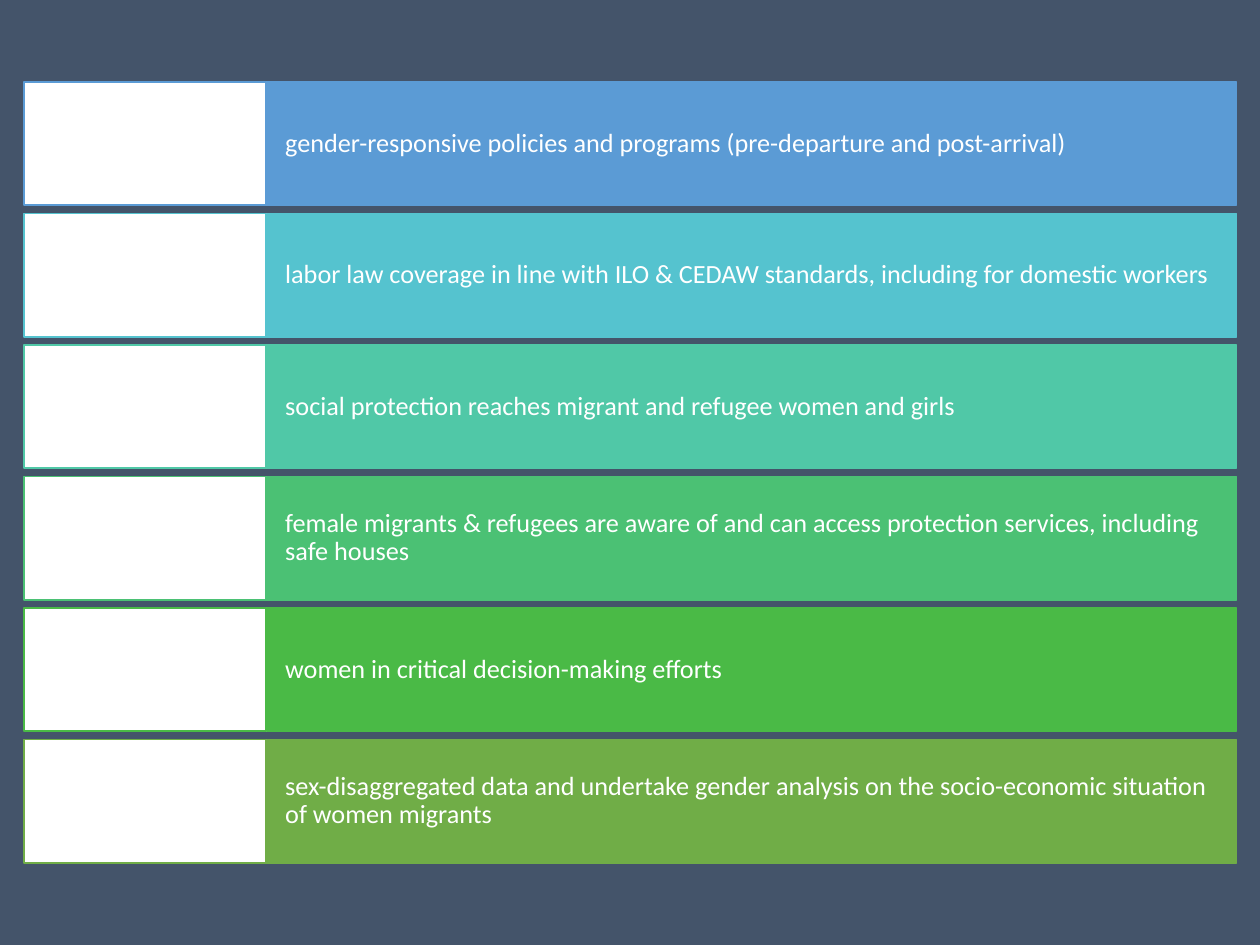
from pptx import Presentation
from pptx.dml.color import RGBColor
from pptx.enum.shapes import MSO_SHAPE as Shape
from pptx.enum.text import MSO_ANCHOR as Anchor, PP_ALIGN as Align
from pptx.util import Pt

COLORS = {
    "background": "44546A",
    "white": "FFFFFF",
    "blue": "5B9BD5",
    "cyan": "55C3CF",
    "teal": "50C8A7",
    "mint": "4BC174",
    "green": "4ABA46",
    "olive": "70AD47",
}

MEASURES = [
    ("blue", "gender-responsive policies and programs (pre-departure and post-arrival)"),
    ("cyan", "labor law coverage in line with ILO & CEDAW standards, including for domestic workers"),
    ("teal", "social protection reaches migrant and refugee women and girls"),
    ("mint", "female migrants & refugees are aware of and can access protection services, including safe houses"),
    ("green", "women in critical decision-making efforts"),
    ("olive", "sex-disaggregated data and undertake gender analysis on the socio-economic situation of women migrants"),
]

MARGIN, TOP = 13.6, 46.8
PANEL_WIDTH, BAR_WIDTH = 138.6, 554.4
ROW_HEIGHT, ROW_PITCH = 70.5, 75.15


class SlideBuilder:
    font = "Calibri"
    size = 15

    def __init__(self, slide):
        self.slide = slide

    def color(self, name):
        return RGBColor.from_string(COLORS[name])

    def background(self, name):
        fill = self.slide.background.fill
        fill.solid()
        fill.fore_color.rgb = self.color(name)

    def box(self, left, top, width, height, fill, line):
        box = self.slide.shapes.add_shape(
            Shape.RECTANGLE, Pt(left), Pt(top), Pt(width), Pt(height))
        box.shadow.inherit = False
        box.fill.solid()
        box.fill.fore_color.rgb = self.color(fill)
        box.line.color.rgb = self.color(line)
        box.line.width = Pt(1)
        return box

    def bar(self, left, top, width, height, fill, wording):
        frame = self.box(left, top, width, height, fill, fill).text_frame
        frame.text = wording
        frame.word_wrap = True
        frame.vertical_anchor = Anchor.MIDDLE
        frame.margin_left = frame.margin_right = Pt(10.8)
        frame.margin_top = frame.margin_bottom = Pt(18)
        paragraph = frame.paragraphs[0]
        paragraph.alignment = Align.LEFT
        paragraph.line_spacing = 0.9
        font = paragraph.runs[0].font
        font.name = self.font
        font.size = Pt(self.size)
        font.color.rgb = self.color("white")


def main():
    deck = Presentation()
    deck.slide_width, deck.slide_height = Pt(720), Pt(540)
    builder = SlideBuilder(deck.slides.add_slide(deck.slide_layouts[6]))
    builder.background("background")
    for row, (accent, measure) in enumerate(MEASURES):
        top = TOP + row * ROW_PITCH
        builder.bar(MARGIN + PANEL_WIDTH, top, BAR_WIDTH, ROW_HEIGHT, accent, measure)
        builder.box(MARGIN, top, PANEL_WIDTH, ROW_HEIGHT, "white", accent)
    deck.save("out.pptx")


if __name__ == "__main__":
    main()
